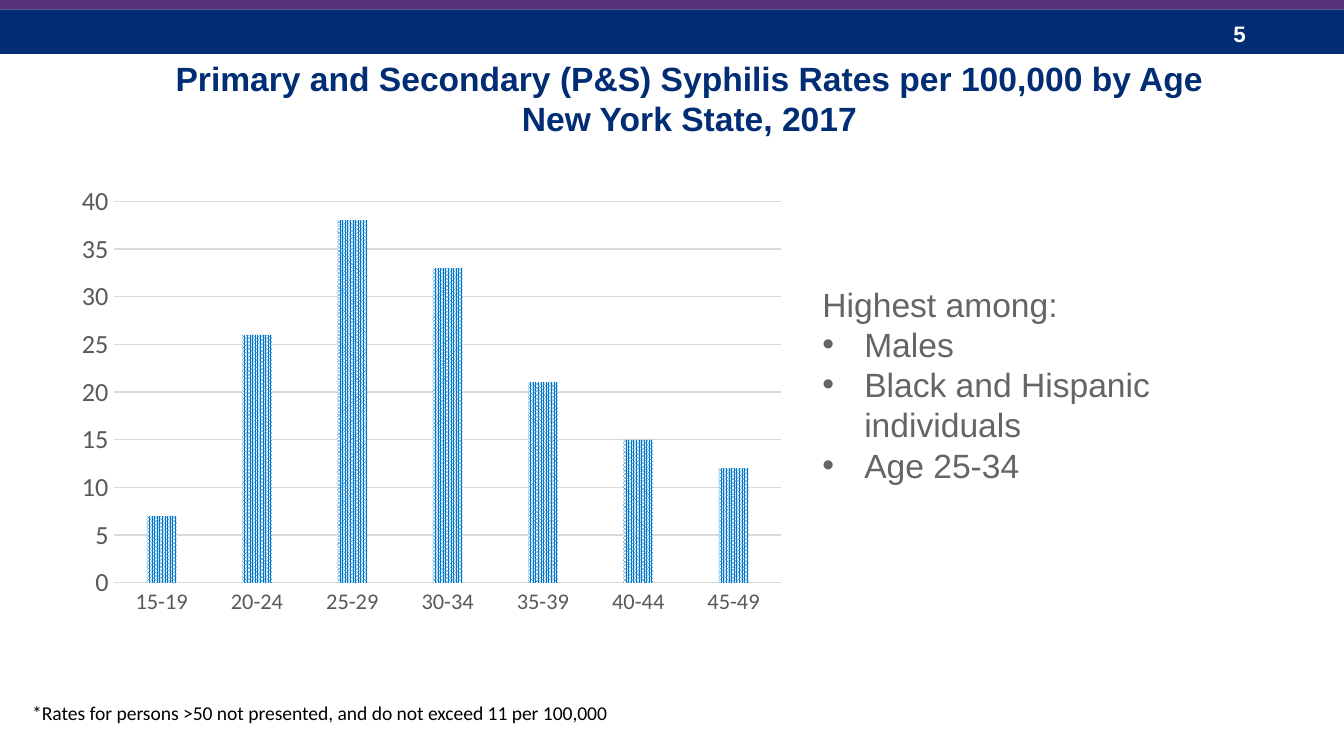
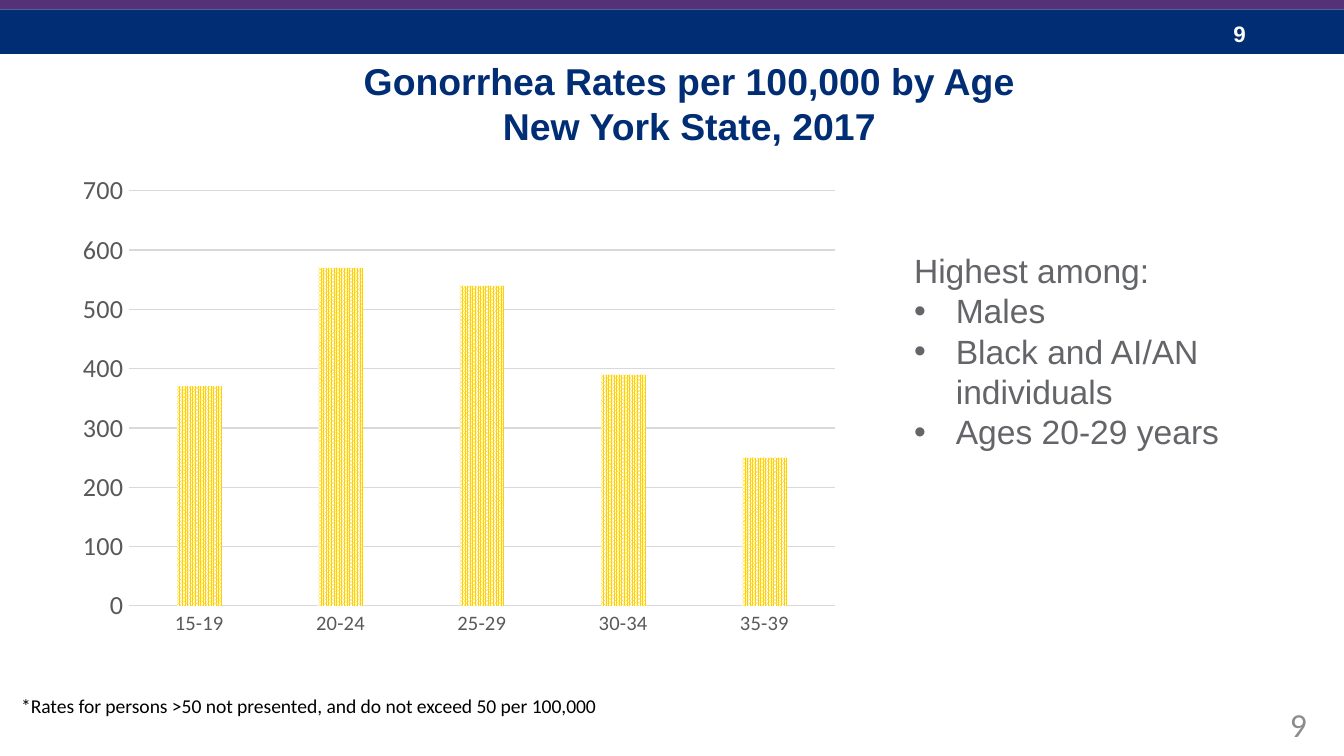
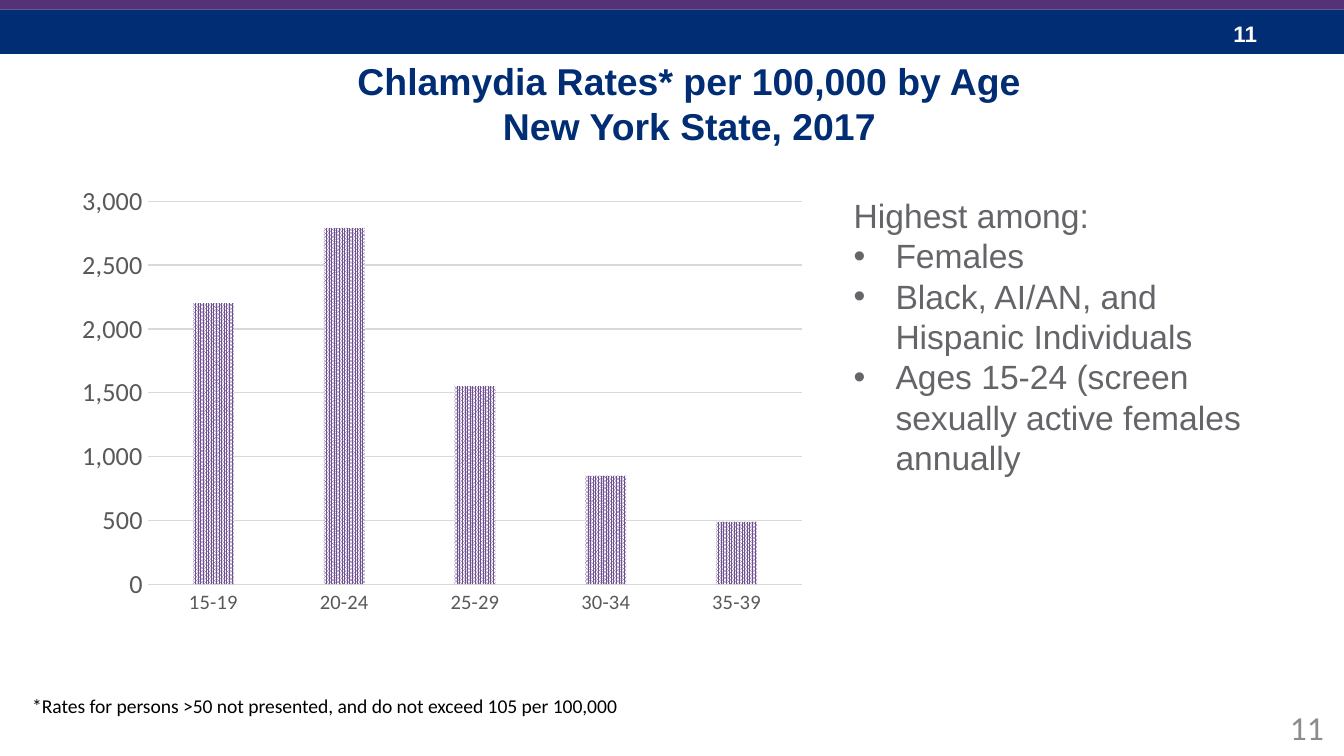
import pptx
import pptx.chart.data
import pptx.dml.color
import pptx.enum.chart
import pptx.enum.dml
import pptx.enum.shapes
import pptx.enum.text
import pptx.util
import lxml.etree
from pptx.oxml.ns import qn

Cm = pptx.util.Cm
Pt = pptx.util.Pt
RGBColor = pptx.dml.color.RGBColor
Anchor = pptx.enum.text.MSO_ANCHOR
AutoSize = pptx.enum.text.MSO_AUTO_SIZE

NAVY = RGBColor(0x00, 0x2D, 0x73)
PLUM = RGBColor(0x55, 0x32, 0x78)
WHITE = RGBColor(0xFF, 0xFF, 0xFF)
BLACK = RGBColor(0x00, 0x00, 0x00)
SLATE = RGBColor(0x64, 0x65, 0x69)
AXIS_TEXT = RGBColor(0x59, 0x59, 0x59)
GRID = RGBColor(0xD9, 0xD9, 0xD9)
PAGE_GRAY = RGBColor(0x8C, 0x8C, 0x8C)
BLUE = RGBColor(0x00, 0x77, 0xC8)
YELLOW = RGBColor(0xFF, 0xD1, 0x00)
PURPLE = RGBColor(0x6F, 0x50, 0x91)

AGES = ["15-19", "20-24", "25-29", "30-34", "35-39", "40-44", "45-49"]
INDENT = Cm(0.79)


class RateDeck:
    """Hold the shared style and the current slide, with a method per element."""

    def __init__(self):
        self.deck = pptx.Presentation()
        self.deck.slide_width = Cm(25.4)
        self.deck.slide_height = Cm(14.29)
        self.slide = None

    def place(self, shape, box):
        shape.left, shape.top, shape.width, shape.height = map(Cm, box)

    def style(self, font, size, color, name="Calibri", bold=False):
        font.name = name
        font.size = Pt(size)
        font.bold = bold
        font.color.rgb = color

    def start(self, number):
        self.slide = self.deck.slides.add_slide(self.deck.slide_layouts[1])
        self.band((0, 0.18, 25.4, 0.84), NAVY)
        self.label(number, (23.06, 0.25, 1.9, 0.76), 12, WHITE, "Arial", True)
        self.band((0, -0.05, 25.4, 0.23), PLUM)

    def band(self, box, color):
        band = self.slide.shapes.add_shape(
            pptx.enum.shapes.MSO_SHAPE.RECTANGLE, *map(Cm, box))
        band.shadow.inherit = False
        band.fill.solid()
        band.fill.fore_color.rgb = color
        band.line.fill.background()

    def label(self, text, box, size, color, name="Calibri", bold=False):
        frame = self.slide.shapes.add_textbox(*map(Cm, box)).text_frame
        frame.text = text
        frame.vertical_anchor = Anchor.MIDDLE
        frame.word_wrap = True
        self.style(frame.paragraphs[0].runs[0].font, size, color, name, bold)
        return frame

    def title(self, text, size):
        title = self.slide.shapes.title
        self.place(title, (1.27, 0.97, 23.52, 2.39))
        frame = title.text_frame
        frame.vertical_anchor = Anchor.TOP
        frame.auto_size = AutoSize.NONE
        heading = frame.paragraphs[0]
        heading.text = text
        heading.alignment = pptx.enum.text.PP_ALIGN.CENTER
        for run in heading.runs:
            self.style(run.font, size, NAVY, "Arial", True)
        for line_break in heading._p.findall(qn("a:br")):
            lxml.etree.SubElement(line_break, qn("a:rPr"), sz=str(size * 100))

    def findings(self, items, box):
        body = self.slide.placeholders[1]
        self.place(body, box)
        frame = body.text_frame
        frame.text = "\n".join(["Highest among:"] + items)
        frame.auto_size = AutoSize.NONE
        for index, finding in enumerate(frame.paragraphs):
            properties = finding._p.get_or_add_pPr()
            if index:
                properties.set("marL", str(INDENT))
                properties.set("indent", str(-INDENT))
                lxml.etree.SubElement(properties, qn("a:buChar"), char="•")
            else:
                properties.set("marL", "0")
                properties.set("indent", "0")
                lxml.etree.SubElement(properties, qn("a:buNone"))
            finding.space_before = Pt(0)
            self.style(finding.runs[0].font, 18, SLATE, "Arial")

    def rates(self, values, box, color, top, step, age_size, number_format):
        data = pptx.chart.data.CategoryChartData(number_format=number_format)
        data.categories = AGES[:len(values)]
        data.add_series("Series 1", values)
        chart = self.slide.shapes.add_chart(
            pptx.enum.chart.XL_CHART_TYPE.COLUMN_CLUSTERED,
            *map(Cm, box), data).chart
        chart.has_title = False
        chart.has_legend = False
        self.style(chart.font, 14, BLACK)

        plot = chart.plots[0]
        plot.vary_by_categories = False
        plot.gap_width = 219
        plot.overlap = -27
        fill = plot.series[0].format.fill
        fill.patterned()
        fill.pattern = pptx.enum.dml.MSO_PATTERN.PERCENT_90
        fill.fore_color.rgb = color
        fill.back_color.rgb = WHITE

        ages, scale = chart.category_axis, chart.value_axis
        for axis, size in ((ages, age_size), (scale, 14)):
            axis.major_tick_mark = pptx.enum.chart.XL_TICK_MARK.NONE
            self.style(axis.tick_labels.font, size, AXIS_TEXT)
        scale.minimum_scale = 0
        scale.maximum_scale = top
        scale.major_unit = step
        scale.tick_labels.number_format = number_format
        scale.tick_labels.number_format_is_linked = False
        scale.format.line.fill.background()
        for line in (ages.format.line, scale.major_gridlines.format.line):
            line.color.rgb = GRID
            line.width = Pt(0.75)

    def footnote(self, limit, left, top):
        text = f"*Rates for persons >50 not presented, and do not exceed {limit} per 100,000"
        frame = self.label(text, (left, top, 11.61, 0.71), 10.5, BLACK)
        frame.vertical_anchor = Anchor.TOP
        frame.word_wrap = False
        frame.auto_size = AutoSize.SHAPE_TO_FIT_TEXT

    def page_number(self, number, top):
        self.label(number, (24.13, top, 1.27, 0.76), 18, PAGE_GRAY)


def main():
    deck = RateDeck()

    deck.start("5")
    deck.title("Primary and Secondary (P&S) Syphilis Rates per 100,000 by Age\n"
               "New York State, 2017", 18)
    deck.rates([7, 26, 38, 33, 21, 15, 12], (1.27, 3.33, 13.77, 8.46),
               BLUE, 40, 5, 12, "General")
    deck.footnote(11, 0.36, 13.13)
    deck.findings(["Males", "Black and Hispanic individuals", "Age 25-34"],
                  (15.29, 5.23, 9.09, 4.88))

    deck.start("9")
    deck.title("Gonorrhea Rates per 100,000 by Age\nNew York State, 2017", 20)
    deck.rates([370, 570, 540, 390, 250], (1.27, 3.12, 14.81, 9.09),
               YELLOW, 700, 100, 11, "General")
    deck.page_number("9", 13.31)
    deck.footnote(50, 0.15, 13)
    deck.findings(["Males", "Black and AI/AN individuals", "Ages 20-29 years"],
                  (17.02, 4.6, 6.78, 4.88))

    deck.start("11")
    deck.title("Chlamydia Rates* per 100,000 by Age\nNew York State, 2017", 20)
    deck.rates([2200, 2790, 1550, 850, 490], (1.27, 3.33, 14.17, 8.46),
               PURPLE, 3000, 500, 11, "#,##0")
    deck.page_number("11", 13.36)
    deck.footnote(105, 0.36, 13)
    deck.findings(["Females", "Black, AI/AN, and Hispanic Individuals",
                   "Ages 15-24 (screen sexually active females annually"],
                  (15.88, 3.56, 8.46, 6.4))

    deck.deck.save("out.pptx")


if __name__ == "__main__":
    main()
